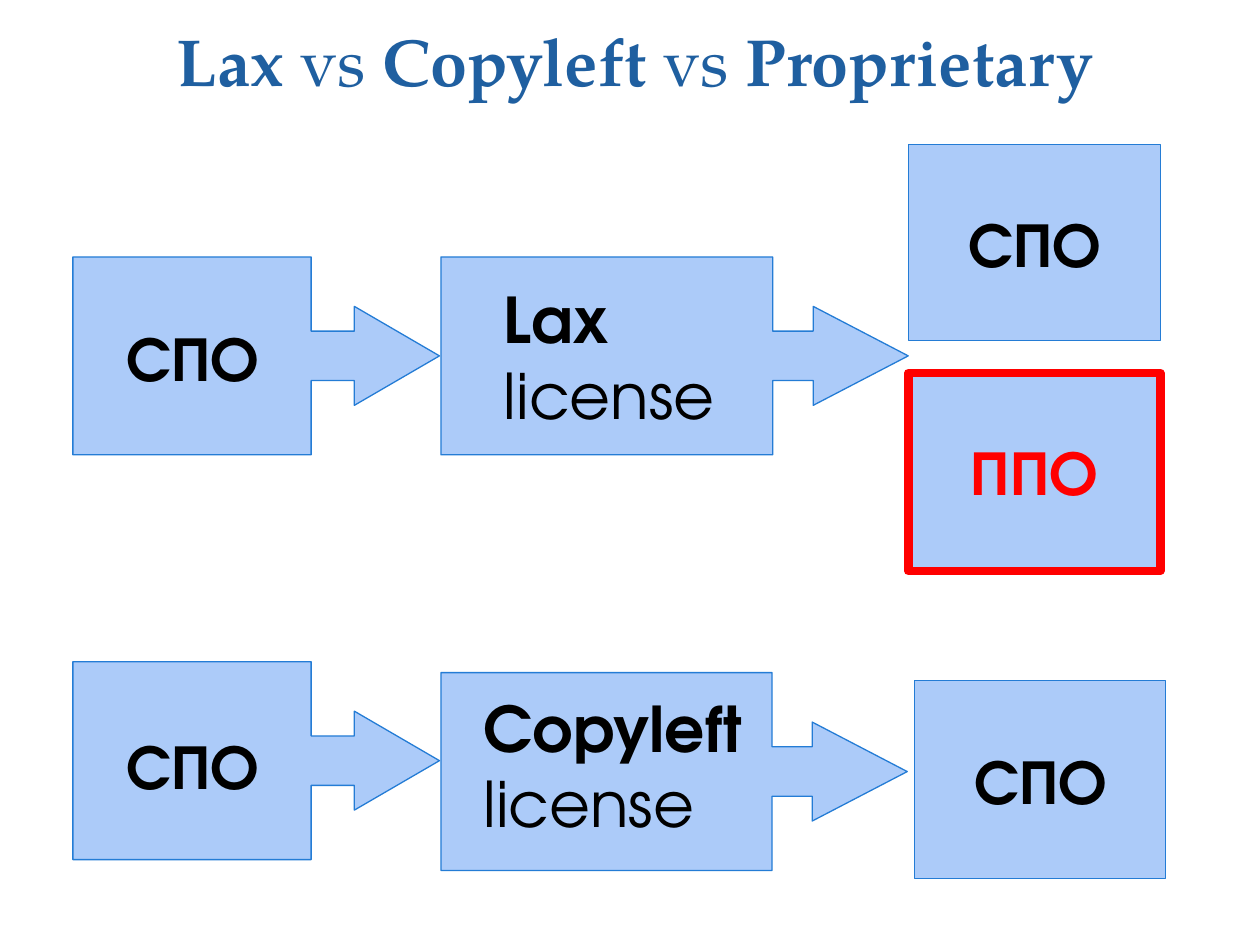
"""Build a slide comparing lax, copyleft and proprietary licensing."""
from pptx import Presentation
from pptx.dml.color import RGBColor as Rgb
from pptx.enum.shapes import MSO_SHAPE as Shape
from pptx.enum.text import MSO_ANCHOR as Anchor, MSO_AUTO_SIZE as AutoSize, PP_ALIGN as Align
from pptx.util import Cm, Pt

COLORS = {"fill": "ACCBF9", "edge": "247CD5", "alert": "FF0000", "text": "000000", "title": "1F5FA0"}
TITLE_FONT = {"name": "TeX Gyre Pagella", "size": Pt(38)}
LABEL_FONT = {"name": "TeX Gyre Adventor", "size": Pt(36)}
LABEL_WIDTH, LABEL_HEIGHT = 3.45, 1.8

deck = Presentation()
deck.slide_width, deck.slide_height = Cm(25.4), Cm(19.05)
page = deck.slides.add_slide(deck.slide_layouts[6])


def add_block(kind, place, edge="edge", weight=0.75, adjustments=()):
    block = page.shapes.add_shape(kind, *map(Cm, place))
    block.shadow.inherit = False
    block.fill.solid()
    block.fill.fore_color.rgb = Rgb.from_string(COLORS["fill"])
    block.line.color.rgb = Rgb.from_string(COLORS[edge])
    block.line.width = Pt(weight)
    for index, value in enumerate(adjustments):
        block.adjustments[index] = value


def add_text(place, lines, font, color="text", align=Align.CENTER, anchor=Anchor.TOP):
    box = page.shapes.add_textbox(*map(Cm, place))
    frame = box.text_frame
    frame_format = {"word_wrap": True, "auto_size": AutoSize.NONE, "vertical_anchor": anchor}
    for name, value in frame_format.items():
        setattr(frame, name, value)
    for number, spans in enumerate(lines):
        para = frame.add_paragraph() if number else frame.paragraphs[0]
        para.alignment = align
        for text, bold in spans:
            span = para.add_run()
            span.text = text
            for name, value in {**font, "bold": bold}.items():
                setattr(span.font, name, value)
            span.font.color.rgb = Rgb.from_string(COLORS[color])


title = [("Lax ", True), ("vs ", False), ("Copyleft ", True), ("vs ", False), ("Proprietary", True)]
add_text((3.18, 0.28, 19.25, 1.85), [title], TITLE_FONT, "title", anchor=Anchor.BOTTOM)

callouts = [
    ((1.47, 5.18, 7.39, 3.99), (0.25, 0.25, 0.43, 0.65)),
    ((8.89, 5.18, 9.42, 3.99), (0.25, 0.25, 0.48, 0.71)),
    ((1.47, 13.34, 7.39, 3.99), (0.25, 0.25, 0.43, 0.65)),
    ((8.89, 13.56, 9.4, 3.99), (0.25, 0.25, 0.48, 0.71)),
]
for place, adjustments in callouts:
    add_block(Shape.RIGHT_ARROW_CALLOUT, place, adjustments=adjustments)

results = [
    ((18.31, 7.52, 5.08, 3.99), "alert", 5),
    ((18.31, 2.92, 5.08, 3.94), "edge", 0.75),
    ((18.44, 13.72, 5.05, 3.99), "edge", 0.75),
]
for place, edge, weight in results:
    add_block(Shape.RECTANGLE, place, edge, weight)

labels = [
    (2.16, 6.3, "СПО", "text"),
    (19.13, 3.99, "СПО", "text"),
    (19.13, 8.59, "ППО", "alert"),
    (2.16, 14.53, "СПО", "text"),
    (19.25, 14.83, "СПО", "text"),
]
for left, top, text, color in labels:
    add_text((left, top, LABEL_WIDTH, LABEL_HEIGHT), [[(text, True)]], LABEL_FONT, color)

licenses = [("Lax", (9.91, 5.54, 5.41, 3.33)), ("Copyleft", (9.5, 13.77, 5.79, 3.33))]
for name, place in licenses:
    add_text(place, [[(name, True)], [("license", False)]], LABEL_FONT, align=Align.LEFT)

deck.save("out.pptx")
